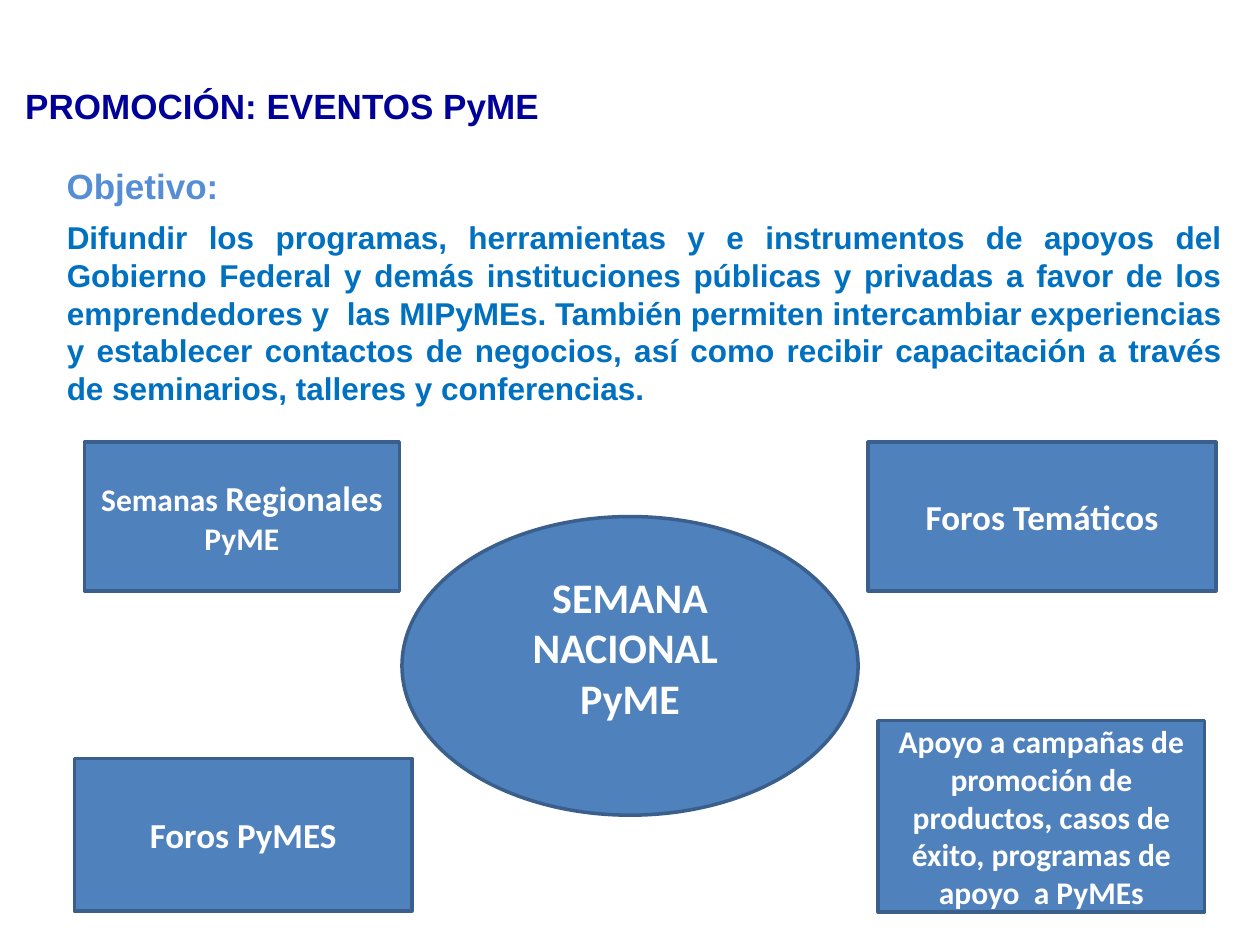
import dataclasses

import pptx
import pptx.dml.color
import pptx.enum.shapes
import pptx.enum.text
import pptx.util
from lxml import etree

Inches = pptx.util.Inches
Pt = pptx.util.Pt
ALIGN = pptx.enum.text.PP_ALIGN
ANCHOR = pptx.enum.text.MSO_ANCHOR
SHAPES = pptx.enum.shapes.MSO_SHAPE


def color(value):
    return pptx.dml.color.RGBColor.from_string(value)


@dataclasses.dataclass(frozen=True)
class Theme:
    heading_font: str = "Arial"
    event_font: str = "Calibri"
    title_color: str = "000099"
    label_color: str = "558ED5"
    body_color: str = "0070C0"
    event_fill: str = "4F81BD"
    event_line: str = "3A5F8C"
    event_text: str = "FFFFFF"
    text_size: int = 18
    heading_size: int = 20
    center_size: int = 24


THEME = Theme()


def place(shape, box):
    shape.left, shape.top, shape.width, shape.height = map(Inches, box)


def format_paragraph(paragraph, font_name, size, font_color, alignment):
    paragraph.alignment = alignment
    paragraph.font.name = font_name
    paragraph.font.size = Pt(size)
    paragraph.font.bold = True
    paragraph.font.color.rgb = color(font_color)


def add_heading_text(shape, box, text, size, font_color, alignment=ALIGN.LEFT):
    """Fill a title, label or body shape with one bold paragraph."""
    place(shape, box)
    frame = shape.text_frame
    frame.text = text
    frame.word_wrap = True
    frame.auto_size = pptx.enum.text.MSO_AUTO_SIZE.NONE
    frame.vertical_anchor = ANCHOR.TOP
    paragraph = frame.paragraphs[0]
    paragraph.space_before = Pt(0)
    format_paragraph(paragraph, THEME.heading_font, size, font_color, alignment)
    return paragraph


def remove_bullet(paragraph):
    properties = paragraph._p.get_or_add_pPr()
    properties.set("marL", "0")
    properties.set("indent", "0")
    etree.SubElement(properties, pptx.oxml.ns.qn("a:buNone"))
    # Default run properties must follow the bullet settings
    defaults = properties.find(pptx.oxml.ns.qn("a:defRPr"))
    if defaults is not None:
        properties.append(defaults)


def add_objective(slide, box):
    """Label above a justified statement, inside the given box."""
    left, top, width, height = box
    label_height = 0.42
    label = slide.shapes.add_textbox(0, 0, 0, 0)
    add_heading_text(label, (left, top, 1.42, label_height), "Objetivo:",
                     THEME.heading_size, THEME.label_color)
    statement = add_heading_text(
        slide.placeholders[1],
        (left, top + label_height, width, height - label_height),
        "Difundir los programas, herramientas y e instrumentos de apoyos del "
        "Gobierno Federal y demás instituciones públicas y privadas a favor de "
        "los emprendedores y  las MIPyMEs. También permiten intercambiar "
        "experiencias y establecer contactos de negocios, así como recibir "
        "capacitación a través de seminarios, talleres y conferencias.",
        THEME.text_size, THEME.body_color, ALIGN.JUSTIFY)
    remove_bullet(statement)


def add_event(slide, box, lines, size, kind=SHAPES.RECTANGLE):
    """Draw one event shape with centred lines of text."""
    shape = slide.shapes.add_shape(kind, *map(Inches, box))
    shape.shadow.inherit = False
    shape.fill.solid()
    shape.fill.fore_color.rgb = color(THEME.event_fill)
    shape.line.color.rgb = color(THEME.event_line)
    shape.line.width = Pt(2)
    frame = shape.text_frame
    frame.word_wrap = True
    frame.vertical_anchor = ANCHOR.MIDDLE
    frame.text = "\n".join(lines)
    for paragraph in frame.paragraphs:
        format_paragraph(paragraph, THEME.event_font, size,
                         THEME.event_text, ALIGN.CENTER)
    return shape


def add_events(slide, box):
    """Central event with four related events around it."""
    left, top, _, _ = box

    def inside(x, y, width, height):
        return left + x, top + y, width, height

    regional = add_event(slide, inside(0.08, 0, 2.5, 1.18),
                         ["Semanas ", "PyME"], THEME.text_size)
    emphasis = regional.text_frame.paragraphs[0].add_run()
    emphasis.text = "Regionales"
    emphasis.font.size = Pt(THEME.heading_size)

    add_event(slide, inside(0, 2.51, 2.68, 1.21),
              ["Foros PyMES"], THEME.heading_size)

    center = add_event(slide, inside(2.6, 0.59, 3.62, 2.37),
                       ["SEMANA", "NACIONAL ", "PyME"],
                       THEME.center_size, SHAPES.OVAL)
    center.text_frame.margin_bottom = Inches(0.35)

    add_event(slide, inside(6.3, 0, 2.76, 1.18),
              ["Foros Temáticos"], THEME.heading_size)
    add_event(slide, inside(6.38, 2.21, 2.59, 1.52),
              ["Apoyo a campañas de promoción de productos, casos de éxito, "
               "programas de apoyo  a PyMEs"], THEME.text_size)


def main():
    presentation = pptx.Presentation()
    presentation.slide_width = Inches(10)
    presentation.slide_height = Inches(7.5)
    slide = presentation.slides.add_slide(presentation.slide_layouts[1])

    add_heading_text(slide.shapes.title, (0.1, 0.62, 7.19, 0.44),
                     "PROMOCIÓN: EVENTOS PyME",
                     THEME.heading_size, THEME.title_color)
    add_objective(slide, (0.43, 1.26, 9.37, 2.1))
    add_events(slide, (0.59, 3.51, 9.06, 3.73))
    presentation.save("out.pptx")


if __name__ == "__main__":
    main()
